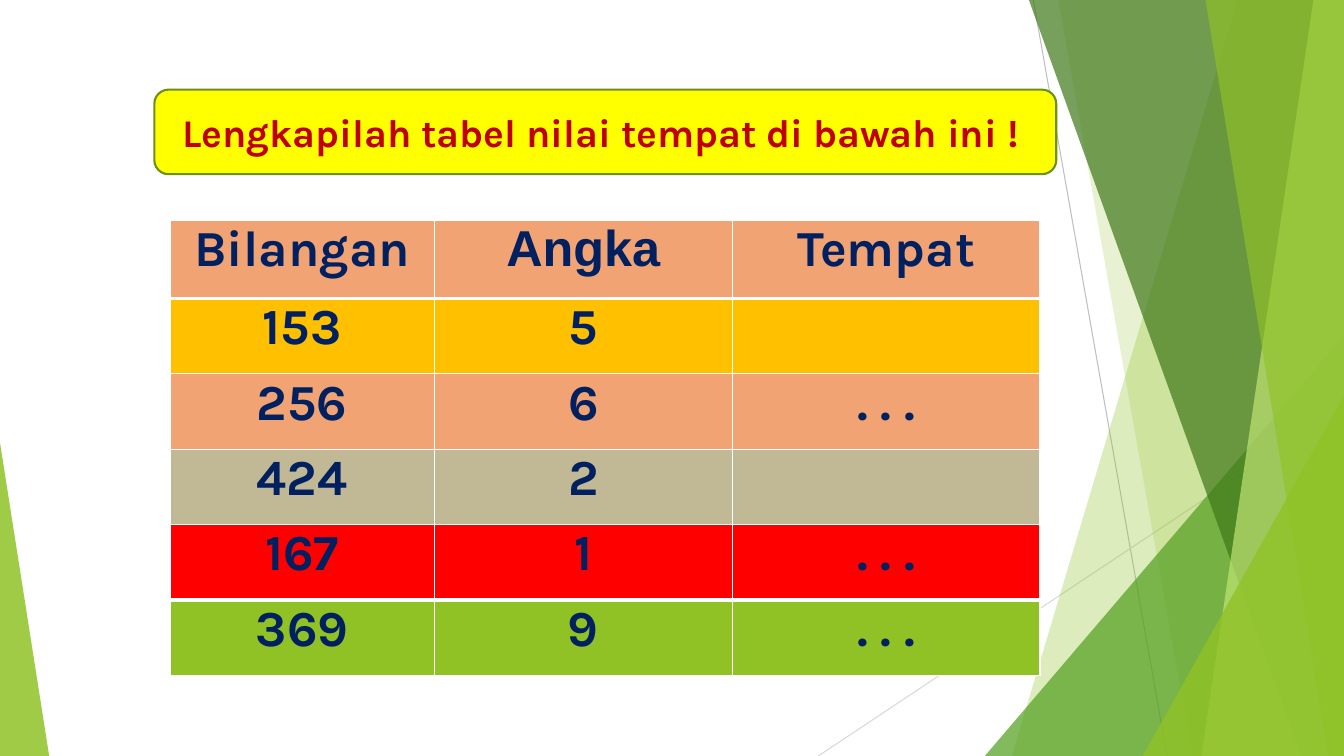
"""Build a slide with a place value table to complete."""
from lxml import etree
from pptx import Presentation
from pptx.dml.color import RGBColor
from pptx.enum.shapes import MSO_CONNECTOR, MSO_SHAPE
from pptx.enum.text import MSO_ANCHOR, PP_ALIGN
from pptx.oxml.ns import qn
from pptx.util import Cm, Pt

STRAIGHT = MSO_CONNECTOR.STRAIGHT
TRIANGLE = MSO_SHAPE.ISOSCELES_TRIANGLE
ROUNDED = MSO_SHAPE.ROUNDED_RECTANGLE
CENTER = PP_ALIGN.CENTER
MIDDLE = MSO_ANCHOR.MIDDLE

WHITE = RGBColor(0xFF, 0xFF, 0xFF)
SILVER = RGBColor(0xBF, 0xBF, 0xBF)
PALE = RGBColor(0xD9, 0xD9, 0xD9)
LIME = RGBColor(0x90, 0xC2, 0x26)
GREEN = RGBColor(0x54, 0xA0, 0x21)
FOREST = RGBColor(0x3F, 0x78, 0x19)
MINT = RGBColor(0xC0, 0xE4, 0x74)
OLIVE = RGBColor(0x6B, 0x90, 0x1C)
YELLOW = RGBColor(0xFF, 0xFF, 0x00)
CRIMSON = RGBColor(0xC0, 0x00, 0x00)
NAVY = RGBColor(0x00, 0x20, 0x60)
PEACH = RGBColor(0xF1, 0xA3, 0x74)
AMBER = RGBColor(0xFF, 0xC0, 0x00)
SAND = RGBColor(0xC1, 0xB9, 0x95)
RED = RGBColor(0xFF, 0x00, 0x00)

WIDE, HIGH = 33.87, 19.05
TITLE = "Lengkapilah tabel nilai tempat di bawah ini ! "
ROWS = [
    (PEACH, ("Bilangan", "Angka", "Tempat")),
    (AMBER, ("153", "5", "")),
    (PEACH, ("256", "6", ". . .")),
    (SAND, ("424", "2", "")),
    (RED, ("167", "1", ". . .")),
    (LIME, ("369", "9", ". . .")),
]
COLS = (6.65, 7.52, 7.75)
HEAD, BODY = 1.96, 1.9
THICK = (1, len(ROWS) - 1)

LINES = [
    (26.04, 0, 29.41, HIGH, SILVER),
    (WIDE, 10.24, 20.62, HIGH, PALE),
]
BACK = [(31.19, 25.5, LIME, 30), (26.67, 30.05, LIME, 20)]
FRONT = [
    (25.93, 32.79, FOREST, 70),
    (33.1, 30.28, MINT, 70),
    (30.38, 33.48, LIME, 65),
]
PEAK = (24.82, 8.46, WIDE - 24.82, 1, GREEN, 72)
ENDS = [
    (28.8, 9.98, WIDE - 28.8, 1, LIME, 80),
    (0, 11.15, 1.24, 0, LIME, 85),
]


def tint(shape, color, alpha):
    shape.shadow.inherit = False
    shape.fill.solid()
    shape.fill.fore_color.rgb = color
    shape.line.fill.background()
    mark = shape.fill._xPr.find(qn("a:solidFill"))[0]
    etree.SubElement(mark, qn("a:alpha"), val=str(alpha * 1000))


def add_line(shapes, x1, y1, x2, y2, color):
    line = shapes.add_connector(STRAIGHT, Cm(x1), Cm(y1), Cm(x2), Cm(y2))
    line.line.color.rgb = color
    line.line.width = Pt(0.75)
    etree.SubElement(line._element.spPr, qn("a:effectLst"))


def add_facet(shapes, top, base, color, alpha):
    pen = shapes.build_freeform(Cm(top), 0)
    edge = [(WIDE, 0), (WIDE, HIGH), (base, HIGH)]
    pen.add_line_segments([(Cm(x), Cm(y)) for x, y in edge])
    tint(pen.convert_to_shape(), color, alpha)


def add_peak(shapes, x, y, w, tip, color, alpha):
    peak = shapes.add_shape(TRIANGLE, Cm(x), Cm(y), Cm(w), Cm(HIGH - y))
    peak.adjustments[0] = tip
    tint(peak, color, alpha)


def add_text(frame, text, size, color, font="Karla"):
    para = frame.paragraphs[0]
    para.alignment = CENTER
    run = para.add_run()
    run.text = text
    run.font.name = font
    run.font.size = Pt(size)
    run.font.bold = True
    run.font.color.rgb = color
    return para


def add_edges(cell, row):
    props = cell._tc.get_or_add_tcPr()
    sides = {"L": 1, "R": 1, "T": 3 if row in THICK else 1,
             "B": 3 if row + 1 in THICK else 1}
    for side, width in sides.items():
        line = etree.SubElement(props, qn("a:ln" + side), w=str(Pt(width)))
        fill = etree.SubElement(line, qn("a:solidFill"))
        etree.SubElement(fill, qn("a:srgbClr"), val=str(WHITE))


def add_grid(shapes):
    high = HEAD + BODY * (len(ROWS) - 1)
    grid = shapes.add_table(len(ROWS), len(COLS), Cm(4.29), Cm(5.56),
                            Cm(sum(COLS)), Cm(high)).table
    grid.first_row = grid.horz_banding = False
    for col, width in zip(grid.columns, COLS):
        col.width = Cm(width)
    for r, (color, texts) in enumerate(ROWS):
        grid.rows[r].height = Cm(BODY if r else HEAD)
        for c, text in enumerate(texts):
            cell = grid.cell(r, c)
            cell.margin_left = cell.margin_right = 0
            cell.margin_top = cell.margin_bottom = 0
            add_edges(cell, r)
            cell.fill.solid()
            cell.fill.fore_color.rgb = color
            if text:
                font = "Arial" if text == "Angka" else "Karla"
                para = add_text(cell.text_frame, text, 36, NAVY, font)
                para.space_before = Pt(3.4)


def add_title(shapes):
    box = shapes.add_shape(ROUNDED, Cm(3.89), Cm(2.26), Cm(22.73), Cm(2.13))
    box.shadow.inherit = False
    box.fill.solid()
    box.fill.fore_color.rgb = YELLOW
    box.line.color.rgb = OLIVE
    box.line.width = Pt(1.5)
    box.text_frame.word_wrap = True
    box.text_frame.vertical_anchor = MIDDLE
    add_text(box.text_frame, TITLE, 28, CRIMSON)


def main():
    deck = Presentation()
    deck.slide_width, deck.slide_height = Cm(WIDE), Cm(HIGH)
    shapes = deck.slides.add_slide(deck.slide_layouts[6]).shapes
    for line in LINES:
        add_line(shapes, *line)
    for facet in BACK:
        add_facet(shapes, *facet)
    add_peak(shapes, *PEAK)
    for facet in FRONT:
        add_facet(shapes, *facet)
    for peak in ENDS:
        add_peak(shapes, *peak)
    add_grid(shapes)
    add_title(shapes)
    deck.save("out.pptx")


if __name__ == "__main__":
    main()
